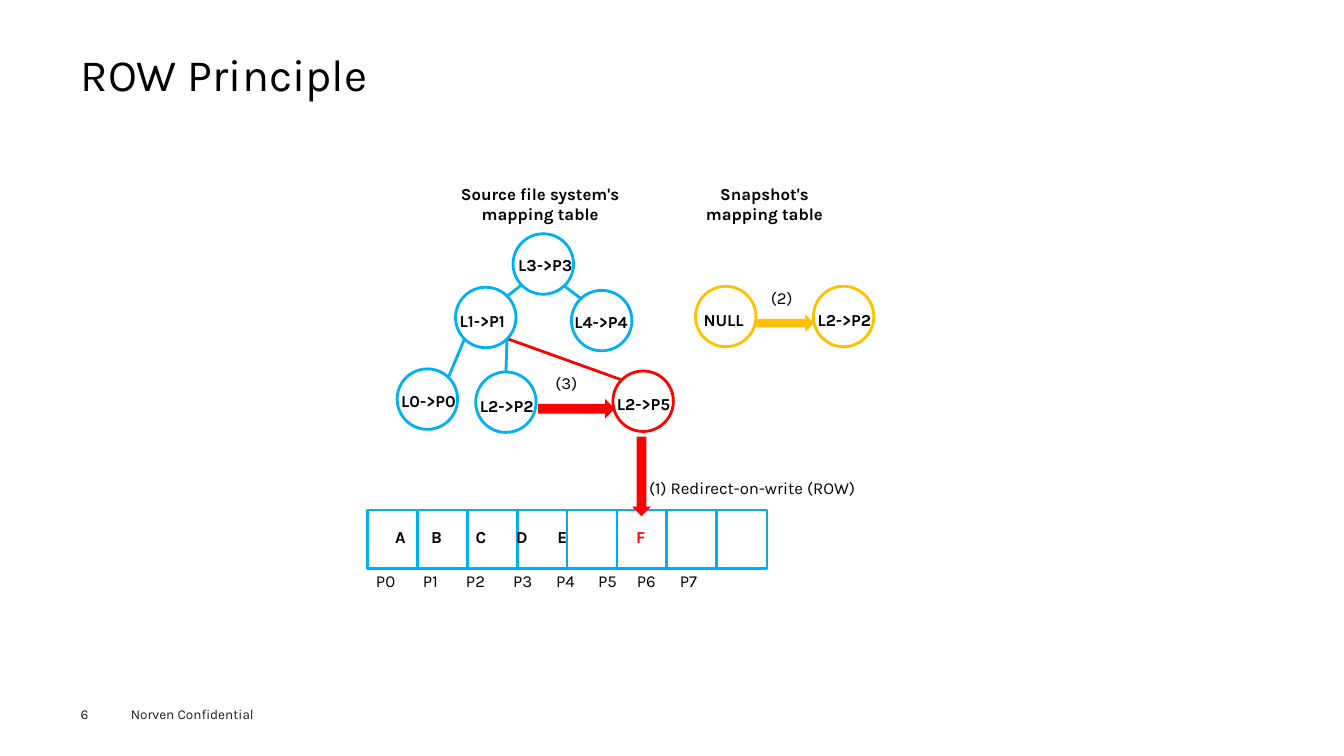
from lxml import etree
from pptx import Presentation
from pptx.dml.color import RGBColor
from pptx.enum.shapes import MSO_CONNECTOR as Connector, MSO_SHAPE as Shape
from pptx.enum.text import MSO_ANCHOR as Anchor, PP_ALIGN as Align
from pptx.oxml.ns import qn
from pptx.util import Pt

BLACK = RGBColor(0x00, 0x00, 0x00)
CHARCOAL = RGBColor(0x1D, 0x1D, 0x1B)
BLUE = RGBColor(0x00, 0xB0, 0xF0)
RED = RGBColor(0xFF, 0x00, 0x00)
GOLD = RGBColor(0xFF, 0xC0, 0x00)
INSETS = (5.76, 2.88)
WIDE_INSETS = (7.2, 3.6)
NODE_SIZE = 43.2


class DiagramPage:
    """Draws styled elements on one slide, with lengths in points."""

    font_name = "Karla"
    line_width = Pt(2)

    def __init__(self, deck):
        self.page = deck.slides.add_slide(deck.slide_layouts[5])

    def style(self, frame, size, color, bold=False, align=Align.LEFT):
        for para in frame.paragraphs:
            para.alignment = align
            for span in para.runs:
                span.font.name = self.font_name
                span.font.size = Pt(size)
                span.font.bold = bold
                span.font.color.rgb = color

    def frame(self, box, insets, anchor):
        frame = box.text_frame
        frame.word_wrap = True
        frame.vertical_anchor = anchor
        frame.margin_left = frame.margin_right = Pt(insets[0])
        frame.margin_top = frame.margin_bottom = Pt(insets[1])
        return frame

    def title(self, text, left, top, width, height):
        box = self.page.shapes.title
        box.left, box.top, box.width, box.height = map(Pt, (left, top, width, height))
        frame = self.frame(box, (0, 0), Anchor.MIDDLE)
        frame.text = text
        frame.paragraphs[0].line_spacing = 0.9
        self.style(frame, 32, BLACK)

    def text(self, text, left, top, width, height=20.2, size=12, color=BLACK,
             bold=False, align=Align.LEFT, insets=INSETS, stops=()):
        box = self.page.shapes.add_textbox(*map(Pt, (left, top, width, height)))
        frame = self.frame(box, insets, Anchor.TOP)
        frame.text = text
        if stops:
            properties = frame.paragraphs[0]._p.get_or_add_pPr()
            tabs = etree.SubElement(properties, qn("a:tabLst"))
            for stop in stops:
                etree.SubElement(tabs, qn("a:tab"), pos=str(Pt(stop)), algn="l")
        self.style(frame, size, color, bold, align)

    def shape(self, kind, left, top, width, height, fill=None, line=None, line_width=None):
        shape = self.page.shapes.add_shape(kind, *map(Pt, (left, top, width, height)))
        shape.shadow.inherit = False
        if fill is None:
            shape.fill.background()
        else:
            shape.fill.solid()
            shape.fill.fore_color.rgb = fill
        if line is None:
            shape.line.fill.background()
        else:
            shape.line.color.rgb = line
            shape.line.width = line_width or self.line_width

    def line(self, start, end, color=BLUE):
        line = self.page.shapes.add_connector(Connector.STRAIGHT, *map(Pt, (*start, *end)))
        line.line.color.rgb = color
        line.line.width = self.line_width
        etree.SubElement(line._element.spPr, qn("a:effectLst"))

    def node(self, label, circle, label_at, color):
        self.shape(Shape.OVAL, *circle, NODE_SIZE, NODE_SIZE, line=color)
        self.text(label, *label_at, 57.6, bold=True)


def main():
    deck = Presentation()
    deck.slide_width, deck.slide_height = Pt(960), Pt(540)
    page = DiagramPage(deck)
    page.title("ROW Principle", 57.6, 35.3, 844.6, 38.9)
    page.text("Norven Confidential", 86.4, 500.4, 115.2, 19.4, size=9.7,
              color=CHARCOAL, insets=WIDE_INSETS)
    page.text("6", 57.6, 504, 39.6, 11.5, size=9.7, color=CHARCOAL, insets=(0, 0))

    page.shape(Shape.RECTANGLE, 262.8, 364.3, 285.1, 41.8, line=BLUE)
    for index in range(7):
        x = 298.1 + 35.65 * index
        page.line((x, 364.3), (x, 406.1))
    page.text("\t".join("ABCDE"), 276.5, 373.7, 198.7, bold=True,
              stops=(25.7, 57.5, 86.5, 116))
    page.text("\t".join(f"P{index}" for index in range(8)), 262.8, 404.6, 339.1,
              stops=(33.6, 64.3, 97.9, 128.6, 158.6, 186.4, 217))

    branches = (
        ((372.2, 203.8), (362.2, 211.7), BLUE),
        ((402.5, 203.8), (414.7, 213.1), BLUE),
        ((331.9, 241.9), (320.4, 269.3), BLUE),
        ((362.2, 241.9), (361.4, 265.7), BLUE),
        ((362.2, 241.9), (444.2, 271.4), RED),
    )
    for start, end, color in branches:
        page.line(start, end, color)

    nodes = (
        ("L3->P3", (366.5, 167), (364.3, 179.3), BLUE),
        ("L1->P1", (325.4, 205.2), (322.6, 218.9), BLUE),
        ("L4->P4", (408.2, 207.4), (404.6, 219.6), BLUE),
        ("L0->P0", (283.7, 263.5), (280.8, 276.5), BLUE),
        ("L2->P2", (339.8, 265.7), (337, 280.1), BLUE),
        ("L2->P5", (437.8, 265), (434.9, 278.6), RED),
        ("NULL", (496.8, 204.5), (496.8, 218.2), GOLD),
        ("L2->P2", (581, 204.5), (578.2, 218.2), GOLD),
    )
    for node in nodes:
        page.node(*node)

    page.shape(Shape.RIGHT_ARROW, 384.5, 285.1, 54.7, 13.7, fill=RED)
    page.shape(Shape.DOWN_ARROW, 451.4, 311.8, 13.7, 56.9, fill=RED)
    page.shape(Shape.RIGHT_ARROW, 540.7, 225.4, 40.3, 10.8, fill=GOLD, line=GOLD,
               line_width=Pt(0.75))

    page.text("(1) Redirect-on-write (ROW)", 457.9, 338.4, 177.8)
    page.text("(2)", 543.6, 202.3, 33.8, 21.6, insets=WIDE_INSETS)
    page.text("(3)", 391, 263.5, 31)
    page.text("F", 448.6, 373.7, 23, color=RED, bold=True)
    page.text("Source file system's\nmapping table", 321.8, 128.2, 128.2, 34.6,
              bold=True, align=Align.CENTER)
    page.text("Snapshot's\nmapping table", 493.2, 128.2, 105.8, 34.6,
              bold=True, align=Align.CENTER)
    deck.save("out.pptx")


if __name__ == "__main__":
    main()
